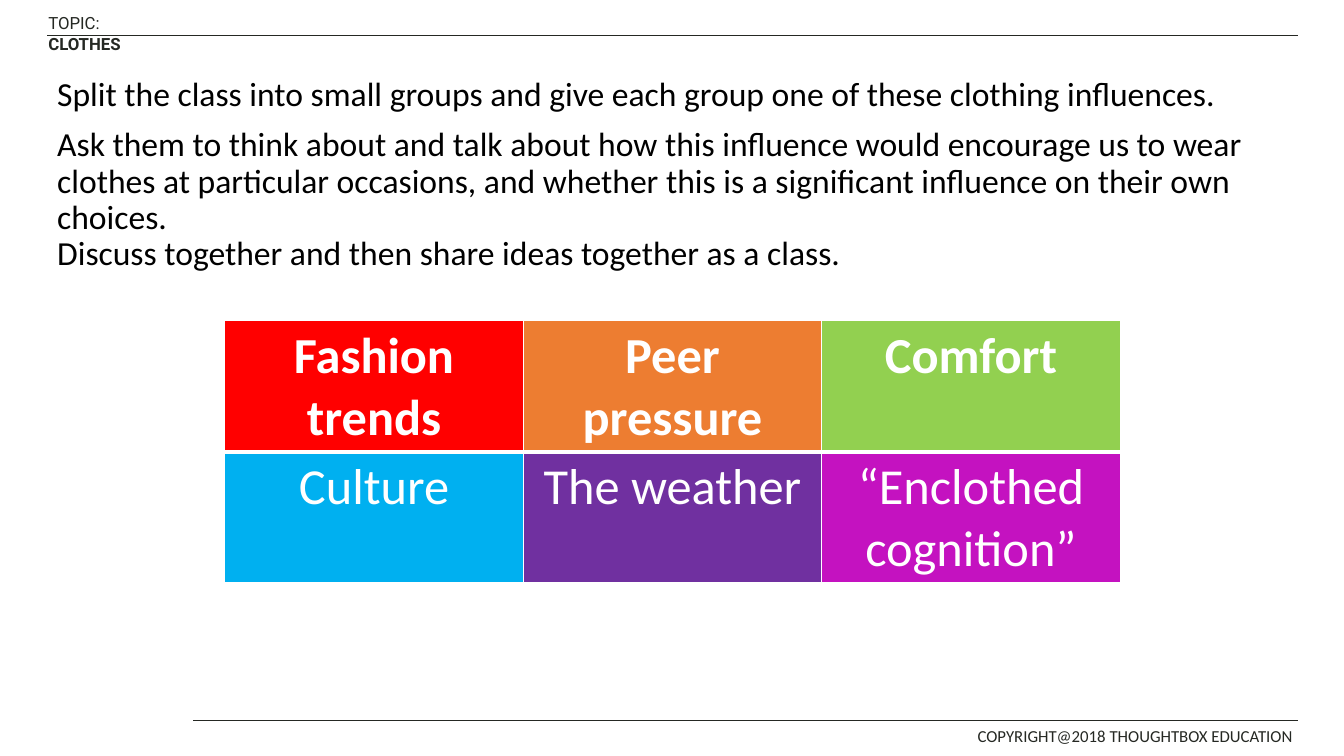
"""Build the clothing influences discussion slide."""
import pptx
import pptx.dml.color
import pptx.enum.shapes
import pptx.enum.text
import pptx.oxml.ns
import pptx.util
from lxml import etree

Pt = pptx.util.Pt
RGB = pptx.dml.color.RGBColor.from_string

THEME = {
    "ink": "252823", "body": "000000", "white": "FFFFFF",
    "label_size": 12, "body_size": 24, "cell_size": 36,
    "label_font": "Roboto", "body_font": "Calibri",
}
INFLUENCES = [
    [("Fashion trends", "FF0000"), ("Peer pressure", "ED7D31"), ("Comfort", "92D050")],
    [("Culture", "00B0F0"), ("The weather", "7030A0"), ("“Enclothed cognition”", "C412C0")],
]
INSTRUCTIONS = [
    "Split the class into small groups and give each group one of these clothing influences.",
    "Ask them to think about and talk about how this influence would encourage us to wear "
    "clothes at particular occasions, and whether this is a significant influence on their "
    "own choices. \vDiscuss together and then share ideas together as a class.",
]


def style_font(font, name, size, color, bold=False):
    font.name = THEME[name]
    font.size = Pt(THEME[size])
    font.color.rgb = RGB(THEME[color])
    font.bold = bold


def add_text_frame(slide, left, top, width, height):
    text_frame = slide.shapes.add_textbox(Pt(left), Pt(top), Pt(width), Pt(height)).text_frame
    text_frame.word_wrap = True
    return text_frame


presentation = pptx.Presentation()
presentation.slide_width = Pt(960)
presentation.slide_height = Pt(540)
slide = presentation.slides.add_slide(presentation.slide_layouts[6])

topic = add_text_frame(slide, 27.4, 5.8, 99.4, 21.6).paragraphs[0]
for text, bold in [("TOPIC: ", False), ("CLOTHES", True)]:
    run = topic.add_run()
    run.text = text
    style_font(run.font, "label_font", "label_size", "ink", bold)

copyright_line = add_text_frame(slide, 691.2, 514.8, 244.8, 22.3).paragraphs[0]
copyright_line.text = "COPYRIGHT@2018 THOUGHTBOX EDUCATION"
style_font(copyright_line.runs[0].font, "body_font", "label_size", "ink")

for left, top in [(33.8, 25.2), (138.2, 514.8)]:
    rule = slide.shapes.add_connector(
        pptx.enum.shapes.MSO_CONNECTOR.STRAIGHT, Pt(left), Pt(top), Pt(927.4), Pt(top))
    rule.line.color.rgb = RGB(THEME["ink"])
    rule.line.width = Pt(1)
    etree.SubElement(rule.element.spPr, pptx.oxml.ns.qn("a:effectLst"))

instructions = add_text_frame(slide, 33.8, 51.8, 892.8, 414.7)
for index, text in enumerate(INSTRUCTIONS):
    paragraph = instructions.add_paragraph() if index else instructions.paragraphs[0]
    paragraph.text = text
    paragraph.line_spacing = 0.9
    paragraph.space_before = Pt(10 if index else 0)
    for run in paragraph.runs:
        style_font(run.font, "body_font", "body_size", "body")

table = slide.shapes.add_table(2, 3, Pt(160.6), Pt(229), Pt(639.6), Pt(187.2)).table
for row_index, row in enumerate(INFLUENCES):
    for column_index, (influence, color) in enumerate(row):
        cell = table.cell(row_index, column_index)
        cell.text = influence
        paragraph = cell.text_frame.paragraphs[0]
        paragraph.alignment = pptx.enum.text.PP_ALIGN.CENTER
        style_font(paragraph.runs[0].font, "body_font", "cell_size", "white", row_index == 0)
        properties = cell._tc.get_or_add_tcPr()
        inner_side = "lnT" if row_index else "lnB"
        for side in ("lnL", "lnR", "lnT", "lnB"):
            border = etree.SubElement(properties, pptx.oxml.ns.qn(f"a:{side}"))
            border.set("w", str(int(Pt(3 if side == inner_side else 1))))
            border_fill = etree.SubElement(border, pptx.oxml.ns.qn("a:solidFill"))
            etree.SubElement(border_fill, pptx.oxml.ns.qn("a:srgbClr"), val=THEME["white"])
        cell.fill.solid()
        cell.fill.fore_color.rgb = RGB(color)

presentation.save("out.pptx")
